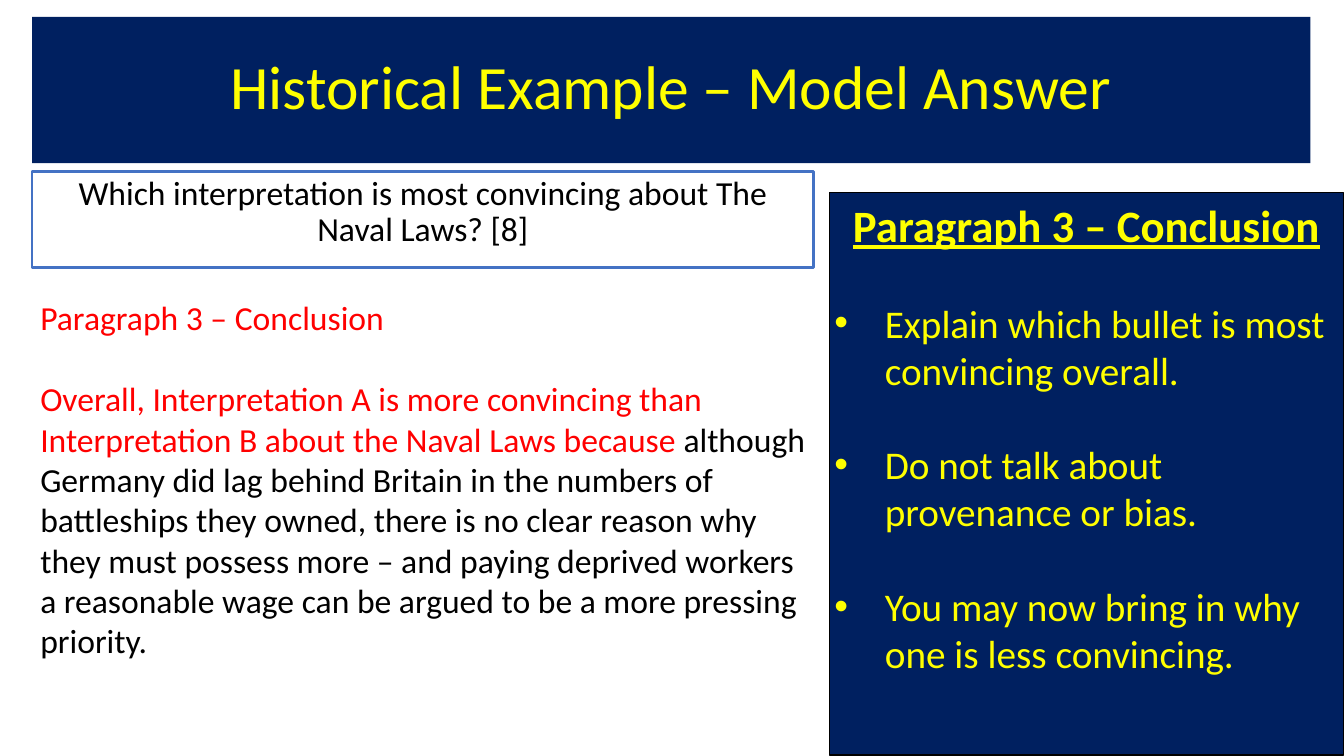
from lxml.etree import SubElement
from pptx import Presentation
from pptx.dml.color import RGBColor as RGB
from pptx.enum.shapes import MSO_SHAPE as SHAPE
from pptx.enum.text import MSO_ANCHOR as ANCHOR, PP_ALIGN as ALIGN
from pptx.oxml.ns import qn
from pptx.util import Pt

NAVY = RGB(0x00, 0x20, 0x60)
BLUE = RGB(0x44, 0x72, 0xC4)
YELLOW = RGB(0xFF, 0xFF, 0x00)
RED = RGB(0xFF, 0x00, 0x00)
BLACK = RGB(0x00, 0x00, 0x00)

deck = Presentation()
deck.slide_width, deck.slide_height = Pt(960), Pt(540)
slide = deck.slides.add_slide(deck.slide_layouts[6])


def add_box(left, top, width, height, fill=None, line=None, weight=0.75):
    box = slide.shapes.add_shape(SHAPE.RECTANGLE, Pt(left), Pt(top), Pt(width), Pt(height))
    box.shadow.inherit = False
    if fill is None:
        box.fill.background()
    else:
        box.fill.solid()
        box.fill.fore_color.rgb = fill
    if line is None:
        box.line.fill.background()
    else:
        box.line.color.rgb = line
        box.line.width = Pt(weight)
    frame = box.text_frame
    frame.word_wrap = True
    frame.vertical_anchor = ANCHOR.TOP
    frame.margin_left = frame.margin_right = Pt(3.6)
    frame.margin_top = frame.margin_bottom = Pt(3.6)
    return frame


def style(para, size, color, align=ALIGN.LEFT):
    para.alignment = align
    for run in para.runs:
        run.font.name = "Calibri"
        run.font.size = Pt(size)
        run.font.color.rgb = color


# Title band
title = add_box(23, 12, 913, 104.5, fill=NAVY)
title.vertical_anchor = ANCHOR.MIDDLE
title.text = "Historical Example – Model Answer"
title.paragraphs[0].line_spacing = 0.9
style(title.paragraphs[0], 44, YELLOW, ALIGN.CENTER)

# Exam question
task = add_box(23, 122.4, 558, 68.6, line=BLUE, weight=1.75)
task.text = "Which interpretation is most convincing about The Naval Laws? [8]"
task.paragraphs[0].line_spacing = 0.9
style(task.paragraphs[0], 24, BLACK, ALIGN.CENTER)

# Advice panel
panel = add_box(592.5, 137.5, 367.2, 401.8, fill=NAVY, line=BLACK)
panel.text = "Paragraph 3 – Conclusion"
head = panel.paragraphs[0]
style(head, 32, YELLOW, ALIGN.CENTER)
head.runs[0].font.bold = True
head.runs[0].font.underline = True

TIPS = [
    "Explain which bullet is most convincing overall.",
    "Do not talk about provenance or bias.",
    "You may now bring in why one is less convincing.",
]
for tip in TIPS:
    para = panel.add_paragraph()
    para.text = tip
    para.space_before = Pt(34)
    style(para, 28, YELLOW)
    props = para._p.get_or_add_pPr()
    props.set("marL", str(Pt(36)))
    props.set("indent", str(Pt(-36)))
    SubElement(props, qn("a:buFont"), typeface="Arial")
    SubElement(props, qn("a:buChar"), char="•")

# Model answer
answer = add_box(25.2, 208.8, 556, 259.2)
answer.text = "Paragraph 3 – Conclusion"
style(answer.paragraphs[0], 24, RED)
body = answer.add_paragraph()
body.space_before = Pt(29)
body.text = ("Overall, Interpretation A is more convincing than "
             "Interpretation B about the Naval Laws because")
rest = body.add_run()
rest.text = (" although Germany did lag behind Britain in the numbers of battleships "
             "they owned, there is no clear reason why they must possess more – and "
             "paying deprived workers a reasonable wage can be argued to be a more "
             "pressing priority.")
style(body, 24, RED)
rest.font.color.rgb = BLACK

deck.save("out.pptx")
